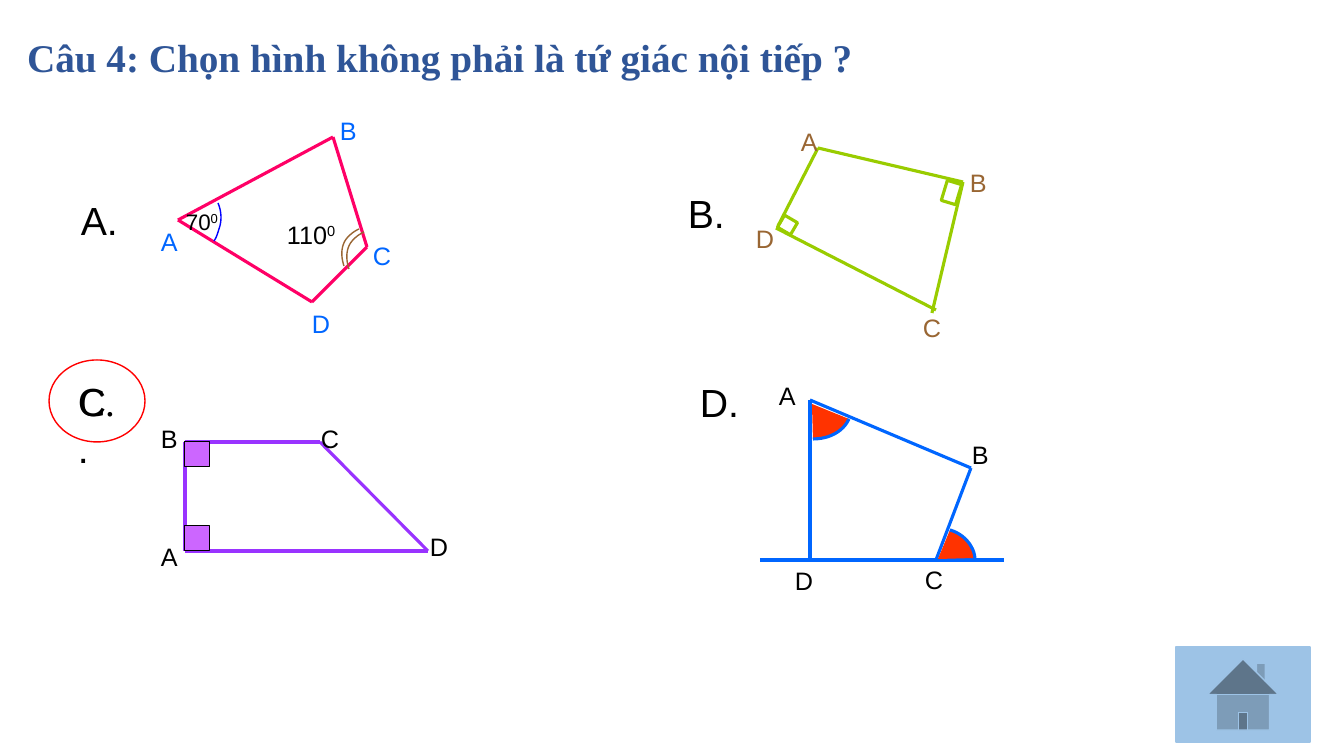
"""Build a quiz slide asking which of four quadrilaterals is not cyclic."""
from lxml import etree
from pptx import Presentation
from pptx.dml.color import RGBColor
from pptx.enum.shapes import MSO_CONNECTOR, MSO_SHAPE
from pptx.enum.text import MSO_ANCHOR, PP_ALIGN
from pptx.oxml.ns import qn
from pptx.util import Pt

STRAIGHT = MSO_CONNECTOR.STRAIGHT
RECTANGLE, OVAL, HOME = MSO_SHAPE.RECTANGLE, MSO_SHAPE.OVAL, MSO_SHAPE.ACTION_BUTTON_HOME
LEFT, CENTER = PP_ALIGN.LEFT, PP_ALIGN.CENTER
TOP, MIDDLE = MSO_ANCHOR.TOP, MSO_ANCHOR.MIDDLE

SLIDE_W, SLIDE_H = 1344, 756
PX = 12192000 / SLIDE_W
LABEL_H = 40
CURVE_STEPS = 12

QUESTION = "Câu 4: Chọn hình không phải là tứ giác nội tiếp ?"
QUESTION_BOX = (17, 28, 866, 58)
ANSWER = "C."
ANSWER_RING = (49, 360, 96, 82)
HOME_BOX = (1176, 647, 134, 95)
OPTIONS = [
    ("A.", (71, 191, 354, 58)),
    ("B.", (678, 184, 287, 58)),
    ("D.", (690, 373, 88, 58)),
    (ANSWER, (68, 372, 55, 58)),
]

ANGLE_C = [(349, 269), (346, 260), (346, 251), (350, 244), (353, 239), (358, 235), (364, 232)]
FIGURES = [
    {
        "line": "FF0066", "text": "0066FF", "label_w": 40,
        "sides": [(178, 220, 333, 137), (333, 137, 367, 247),
                  (367, 247, 312, 302), (312, 302, 178, 220)],
        "vertices": [("A", 151, 221), ("B", 330, 110), ("C", 363, 235), ("D", 302, 303)],
        "arcs": [
            ("0000FF", [(218, 203), (221, 210), (222, 218), (220, 226),
                        (218, 232), (217, 237), (214, 241)]),
            ("996633", ANGLE_C),
            ("996633", [(x - 5, y - 3) for x, y in ANGLE_C]),
        ],
        "degrees": [("70", (176, 203, 53, 37), 16), ("110", (277, 214, 103, 40), 18)],
    },
    {
        "line": "99CC00", "text": "996633", "label_w": 38,
        "sides": [(778, 226, 818, 148), (776, 228, 936, 310),
                  (818, 148, 963, 182), (932, 313, 963, 182)],
        "vertices": [("A", 791, 121), ("B", 960, 162), ("C", 913, 307), ("D", 746, 218)],
        "corners": [((941, 185, 21, 15), 286.8), ((780, 218, 15, 14), 30.3)],
        "corner_style": {"line": "99CC00", "weight": 2.25},
    },
    {
        "line": "9933FF", "text": "000000", "label_w": 58,
        "sides": [(185, 551, 428, 551), (185, 442, 185, 551),
                  (185, 442, 320, 442), (320, 442, 428, 551)],
        "vertices": [("A", 151, 536), ("B", 151, 418), ("C", 311, 418), ("D", 420, 526)],
        "corners": [((185, 526, 25, 25), 0), ((185, 442, 25, 25), 0)],
        "corner_style": {"fill": "CC66FF", "line": "000000", "weight": 0.75},
    },
    {
        "line": "0066FF", "text": "000000", "label_w": 58,
        "sides": [(760, 560, 1004, 560), (810, 400, 810, 560),
                  (810, 400, 971, 468), (971, 468, 936, 560)],
        "vertices": [("A", 769, 375), ("B", 962, 434), ("C", 915, 559), ("D", 785, 560)],
        "sectors": [
            ((812, 404), [(849, 419), (843, 432), (829, 439), (813, 439)]),
            ((938, 559), [(950, 530), (964, 534), (974, 546), (975, 558)]),
        ],
        "sector_fill": "FF3300",
    },
]


def emu(*lengths):
    return [round(length * PX) for length in lengths]


def color(value):
    return RGBColor.from_string(value)


def style(shape, fill=None, line=None, weight=1):
    shape.shadow.inherit = False
    if fill:
        shape.fill.solid()
        shape.fill.fore_color.rgb = color(fill)
    else:
        shape.fill.background()
    if line:
        shape.line.color.rgb = color(line)
        shape.line.width = Pt(weight)
    else:
        shape.line.fill.background()


def write(shape, text, size=18, font="Arial", ink="000000", bold=False,
          align=LEFT, anchor=TOP, wrap=True, raised=""):
    frame = shape.text_frame
    frame.word_wrap = wrap
    frame.vertical_anchor = anchor
    paragraph = frame.paragraphs[0]
    paragraph.alignment = align
    for part in filter(None, (text, raised)):
        run = paragraph.add_run()
        run.text = part
        run.font.size = Pt(size)
        run.font.name = font
        run.font.bold = bold
        run.font.color.rgb = color(ink)
    if raised:
        run._r.get_or_add_rPr().set("baseline", "30000")


def add_preset(shapes, kind, box, turn=0, **look):
    shape = shapes.add_shape(kind, *emu(*box))
    shape.rotation = turn
    style(shape, **look)
    return shape


def add_side(shapes, ends, ink):
    side = shapes.add_connector(STRAIGHT, *emu(*ends))
    side.line.color.rgb = color(ink)
    side.line.width = Pt(2.25)
    etree.SubElement(side._element.spPr, qn("a:effectLst"))


def curve_points(controls):
    points = [controls[0]]
    for first in range(0, len(controls) - 1, 3):
        a, b, c, d = controls[first:first + 4]
        for step in range(1, CURVE_STEPS + 1):
            t = step / CURVE_STEPS
            weights = ((1 - t) ** 3, 3 * t * (1 - t) ** 2, 3 * t * t * (1 - t), t ** 3)
            points.append(tuple(sum(w * p[axis] for w, p in zip(weights, (a, b, c, d)))
                                for axis in (0, 1)))
    return points


def add_outline(shapes, points, close=False, **look):
    corners = [tuple(emu(*point)) for point in points]
    builder = shapes.build_freeform(*corners[0])
    builder.add_line_segments(corners[1:], close=close)
    style(builder.convert_to_shape(), **look)


def add_figure(slide, figure):
    shapes = slide.shapes.add_group_shape().shapes
    for ends in figure["sides"]:
        add_side(shapes, ends, figure["line"])
    for box, turn in figure.get("corners", []):
        add_preset(shapes, RECTANGLE, box, turn, **figure["corner_style"])
    for ink, controls in figure.get("arcs", []):
        add_outline(shapes, curve_points(controls), line=ink)
    for center, controls in figure.get("sectors", []):
        rim = curve_points(controls)
        add_outline(shapes, rim + [center], close=True, fill=figure["sector_fill"])
        add_outline(shapes, rim, line=figure["line"], weight=2.25)
    for vertex, left, top in figure["vertices"]:
        label = shapes.add_textbox(*emu(left, top, figure["label_w"], LABEL_H))
        write(label, vertex, ink=figure["text"])
    for degrees, box, size in figure.get("degrees", []):
        write(shapes.add_textbox(*emu(*box)), degrees, size=size, raised="0")


def main():
    deck = Presentation()
    deck.slide_width, deck.slide_height = emu(SLIDE_W, SLIDE_H)
    slide = deck.slides.add_slide(deck.slide_layouts[5])
    question = slide.shapes.title
    question.left, question.top, question.width, question.height = emu(*QUESTION_BOX)
    write(question, QUESTION, size=28, font="Times New Roman", ink="2F5597",
          bold=True, wrap=False)
    ring = add_preset(slide.shapes, OVAL, ANSWER_RING, fill="FFFFFF", line="FF0000")
    write(ring, ANSWER, size=28, font="Times New Roman", align=CENTER, anchor=MIDDLE)
    add_preset(slide.shapes, HOME, HOME_BOX, fill="9DC3E6", line="9DC3E6")
    for figure in FIGURES:
        add_figure(slide, figure)
    for letter, box in OPTIONS:
        write(slide.shapes.add_textbox(*emu(*box)), letter, size=28)
    deck.save("out.pptx")


if __name__ == "__main__":
    main()
